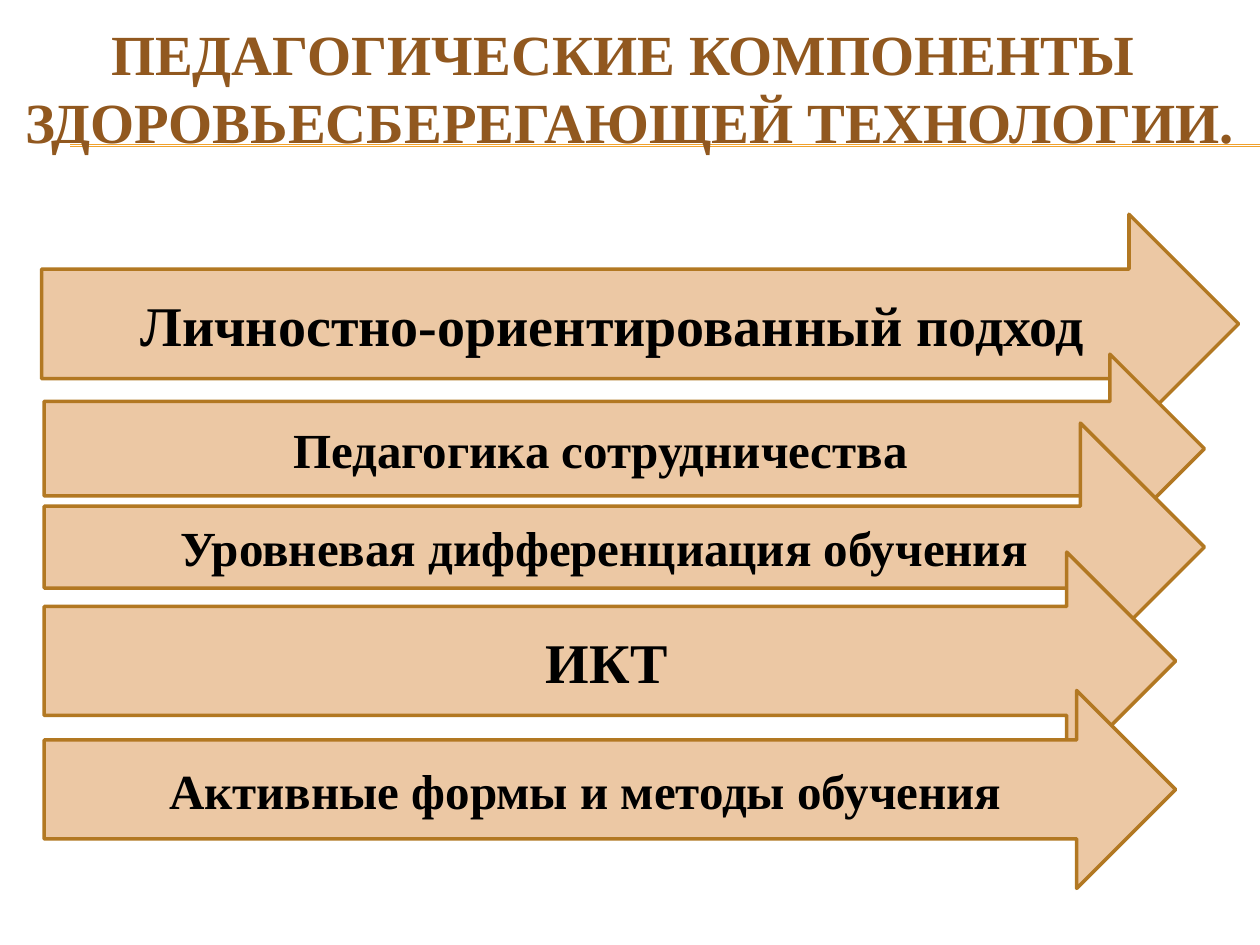
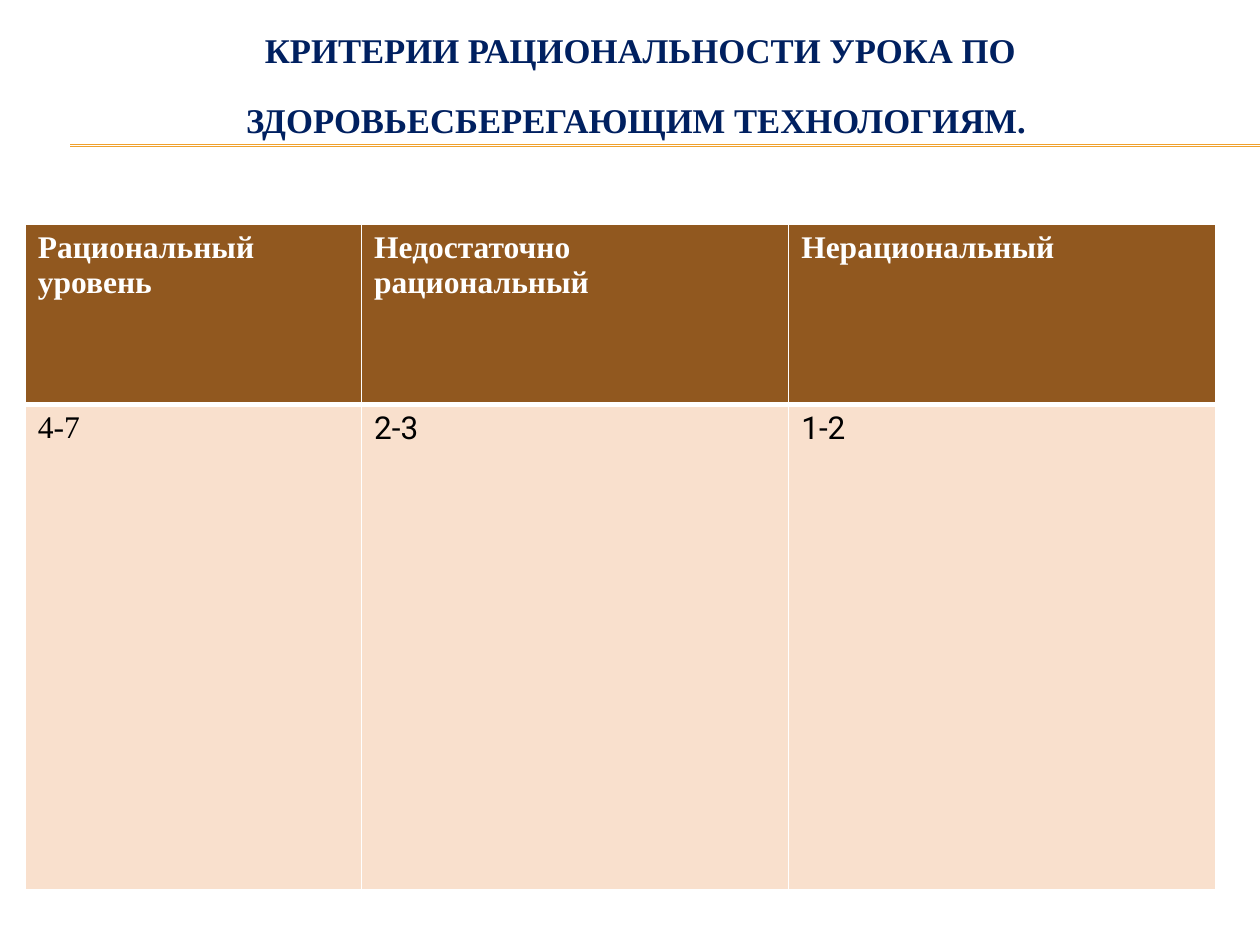
from lxml import etree
from pptx import Presentation
from pptx.dml.color import RGBColor
from pptx.enum.shapes import MSO_CONNECTOR, MSO_SHAPE
from pptx.enum.text import MSO_ANCHOR, MSO_AUTO_SIZE, PP_ALIGN
from pptx.oxml import parse_xml
from pptx.oxml.ns import nsdecls, qn
from pptx.util import Cm, Pt

BROWN = RGBColor(0x91, 0x58, 0x1F)
NAVY = RGBColor(0x00, 0x20, 0x60)
AMBER = RGBColor(0xF0, 0xA2, 0x2E)
OCHRE = RGBColor(0xB2, 0x78, 0x22)
SAND = RGBColor(0xEC, 0xC8, 0xA4)
CREAM = RGBColor(0xF9, 0xE0, 0xCD)
BLACK = RGBColor(0, 0, 0)
WHITE = RGBColor(0xFF, 0xFF, 0xFF)
SERIF = "Times New Roman"
SANS = "Roboto"


class SlideBuilder:
    def __init__(self):
        self.deck = Presentation()
        self.deck.slide_width = Cm(25.4)
        self.deck.slide_height = Cm(19.05)
        self.page = None

    def start_page(self):
        self.page = self.deck.slides.add_slide(self.deck.slide_layouts[5])
        for height in (2.92, 2.95):
            self.rule(height)

    def rule(self, top):
        line = self.page.shapes.add_connector(
            MSO_CONNECTOR.STRAIGHT, Cm(1.42), Cm(top), Cm(25.4), Cm(top))
        line.line.color.rgb = AMBER
        line.line.width = Pt(0.75)
        etree.SubElement(line.element.spPr, qn("a:effectLst"))
        self.page.shapes.title.element.addprevious(line.element)

    def style(self, para, size, color, bold=True, font=SERIF):
        for span in para.runs:
            span.font.name = font
            span.font.size = Pt(size)
            span.font.bold = bold
            span.font.color.rgb = color

    def title(self, text, left, top, width, size, color, pitch):
        box = self.page.shapes.title
        box.left, box.top, box.width, box.height = Cm(left), Cm(top), Cm(width), Cm(2.34)
        frame = box.text_frame
        frame.text = text
        frame.word_wrap = True
        frame.auto_size = MSO_AUTO_SIZE.NONE
        frame.vertical_anchor = MSO_ANCHOR.MIDDLE
        frame.margin_left = frame.margin_right = frame.margin_top = frame.margin_bottom = 0
        para = frame.paragraphs[0]
        para.alignment = PP_ALIGN.CENTER
        para.line_spacing = Pt(pitch)
        self.style(para, size, color)

    def arrow(self, text, left, top, width, height, size, shaft=0.5, inset=0.25):
        box = self.page.shapes.add_shape(
            MSO_SHAPE.RIGHT_ARROW, Cm(left), Cm(top), Cm(width), Cm(height))
        box.shadow.inherit = False
        box.adjustments[0] = shaft
        box.fill.solid()
        box.fill.fore_color.rgb = SAND
        box.line.color.rgb = OCHRE
        box.line.width = Pt(2)
        frame = box.text_frame
        frame.text = text
        frame.word_wrap = True
        frame.vertical_anchor = MSO_ANCHOR.MIDDLE
        frame.margin_left = Cm(inset)
        para = frame.paragraphs[0]
        para.alignment = PP_ALIGN.CENTER
        self.style(para, size, BLACK)

    def cell_borders(self, cell, **widths):
        properties = cell._tc.get_or_add_tcPr()
        for side in "LRTB":
            width = Pt(widths.get(side, 1))
            properties.append(parse_xml(
                f'<a:ln{side} {nsdecls("a")} w="{width}"><a:solidFill>'
                f'<a:srgbClr val="{WHITE}"/></a:solidFill></a:ln{side}>'))

    def table(self, rows, left, top, widths, heights):
        table = self.page.shapes.add_table(
            len(rows), len(widths), Cm(left), Cm(top),
            Cm(sum(widths)), Cm(sum(heights))).table
        for column, width in zip(table.columns, widths):
            column.width = Cm(width)
        for row, height in zip(table.rows, heights):
            row.height = Cm(height)
        for r, texts in enumerate(rows):
            header = r == 0
            for c, text in enumerate(texts):
                cell = table.cell(r, c)
                self.cell_borders(cell, **({"B": 3} if header else {"T": 3}))
                cell.fill.solid()
                cell.fill.fore_color.rgb = BROWN if header else CREAM
                cell.text = text
                self.style(cell.text_frame.paragraphs[0], 18,
                           WHITE if header else BLACK, header,
                           SERIF if header or c == 0 else SANS)


def main():
    builder = SlideBuilder()

    builder.start_page()
    builder.title("ПЕДАГОГИЧЕСКИЕ КОМПОНЕНТЫ \vЗДОРОВЬЕСБЕРЕГАЮЩЕЙ ТЕХНОЛОГИИ.",
                  0, 0.58, 25.4, 32.4, BROWN, 38.9)
    builder.arrow("Личностно-ориентированный подход", 0.84, 4.32, 24.13, 4.42, 32)
    builder.arrow("Педагогика сотрудничества", 0.89, 7.14, 23.39, 3.81, 28)
    builder.arrow("Уровневая дифференциация обучения", 0.89, 8.53, 23.39, 5, 28, shaft=0.33)
    builder.arrow("ИКТ", 0.89, 11.13, 22.81, 4.39, 32, inset=1.22)
    builder.arrow("Активные формы и методы обучения", 0.89, 13.92, 22.81, 3.99, 28)

    builder.start_page()
    builder.title("КРИТЕРИИ РАЦИОНАЛЬНОСТИ УРОКА ПО ЗДОРОВЬЕСБЕРЕГАЮЩИМ ТЕХНОЛОГИЯМ. ",
                  0.84, 0.25, 24.13, 19.8, NAVY, 40)
    builder.table([["Рациональный уровень", "Недостаточно рациональный", "Нерациональный"],
                   ["4-7", "2-3", "1-2"]],
                  0.51, 4.52, [6.78, 8.61, 8.61], [3.63, 9.78])

    builder.deck.save("out.pptx")


if __name__ == "__main__":
    main()
